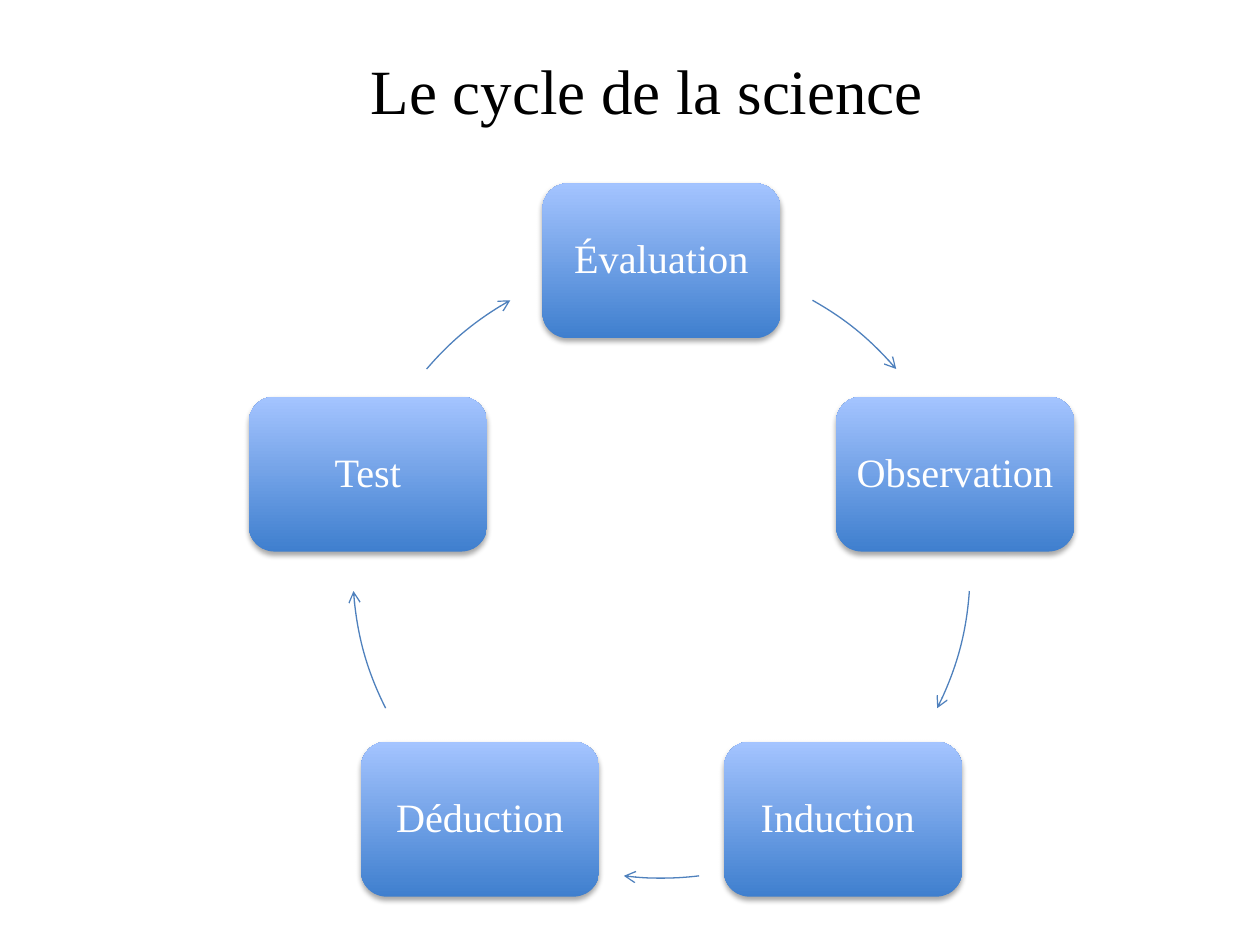
from math import cos, radians, sin

from pptx import Presentation
from pptx.dml.color import RGBColor
from pptx.enum.shapes import MSO_SHAPE
from pptx.enum.text import MSO_ANCHOR, PP_ALIGN
from pptx.oxml import parse_xml
from pptx.oxml.ns import nsdecls, qn
from pptx.util import Inches, Pt

TITLE = "Le cycle de la science"
STEPS = ["Évaluation", "Observation", "Induction ", "Déduction", "Test"]
ARROW_ANGLES = [(299.3, 319.5), (4, 26.7), (83, 97), (153.3, 176), (220.5, 240.7)]
COLORS = {
    "title": "000000",
    "label": "FFFFFF",
    "box_bottom": "3F7FCE",
    "box_top": "A4C4FF",
    "arrow": "4F81BD",
    "shadow": "000000",
}
FONT = "Times New Roman"
CENTER_X, CENTER_Y, RADIUS = 5.25, 4.52, 2.45
BOX_WIDTH, BOX_HEIGHT = 1.89, 1.23


def color(name):
    return RGBColor.from_string(COLORS[name])


def write(shape, text, size, color_name):
    text_frame = shape.text_frame
    text_frame.text = text
    text_frame.word_wrap = True
    text_frame.vertical_anchor = MSO_ANCHOR.MIDDLE
    paragraph = text_frame.paragraphs[0]
    paragraph.alignment = PP_ALIGN.CENTER
    font = paragraph.runs[0].font
    font.name, font.size, font.color.rgb = FONT, Pt(size), color(color_name)
    return paragraph


def add_box(slide, label, angle):
    left = CENTER_X + RADIUS * cos(radians(angle)) - BOX_WIDTH / 2
    top = CENTER_Y + RADIUS * sin(radians(angle)) - BOX_HEIGHT / 2
    box = slide.shapes.add_shape(
        MSO_SHAPE.ROUNDED_RECTANGLE,
        Inches(left), Inches(top), Inches(BOX_WIDTH), Inches(BOX_HEIGHT),
    )
    box.fill.gradient()
    box.fill.gradient_angle = 90
    for position, name in enumerate(("box_bottom", "box_top")):
        stop = box.fill.gradient_stops[position]
        stop.color.rgb = color(name)
        stop.position = position
    box.line.fill.background()
    box.shadow.inherit = False
    box._element.spPr.find(qn("a:effectLst")).append(parse_xml(
        f'<a:outerShdw {nsdecls("a")} blurRad="{Pt(3.1)}" dist="{Pt(1.8)}" '
        f'dir="5400000" rotWithShape="0"><a:srgbClr val="{COLORS["shadow"]}">'
        '<a:alpha val="35000"/></a:srgbClr></a:outerShdw>'
    ))
    text_frame = box.text_frame
    text_frame.margin_left = text_frame.margin_right = Inches(0.08)
    write(box, label, 23, "label").line_spacing = 0.9


def add_arrow(slide, start, end):
    arc = slide.shapes.add_shape(
        MSO_SHAPE.ARC,
        Inches(CENTER_X - RADIUS), Inches(CENTER_Y - RADIUS),
        Inches(2 * RADIUS), Inches(2 * RADIUS),
    )
    for index, angle in enumerate((start, end)):
        arc.adjustments[index] = angle * 0.6
    arc.fill.background()
    arc.line.color.rgb = color("arrow")
    arc.line.width = Pt(0.75)
    arc.shadow.inherit = False
    arc._element.spPr.find(qn("a:ln")).append(
        parse_xml(f'<a:tailEnd {nsdecls("a")} type="arrow"/>')
    )


def main():
    """Build the science cycle slide."""
    presentation = Presentation()
    presentation.slide_width, presentation.slide_height = Inches(10), Inches(7.5)
    slide = presentation.slides.add_slide(presentation.slide_layouts[5])
    title = slide.shapes.title
    title.left, title.top = Inches(0.77), Inches(0.3)
    title.width, title.height = Inches(8.73), Inches(0.82)
    write(title, TITLE, 36, "title")
    for index, (label, angles) in enumerate(zip(STEPS, ARROW_ANGLES)):
        add_box(slide, label, index * 360 / len(STEPS) - 90)
        add_arrow(slide, *angles)
    presentation.save("out.pptx")


if __name__ == "__main__":
    main()
